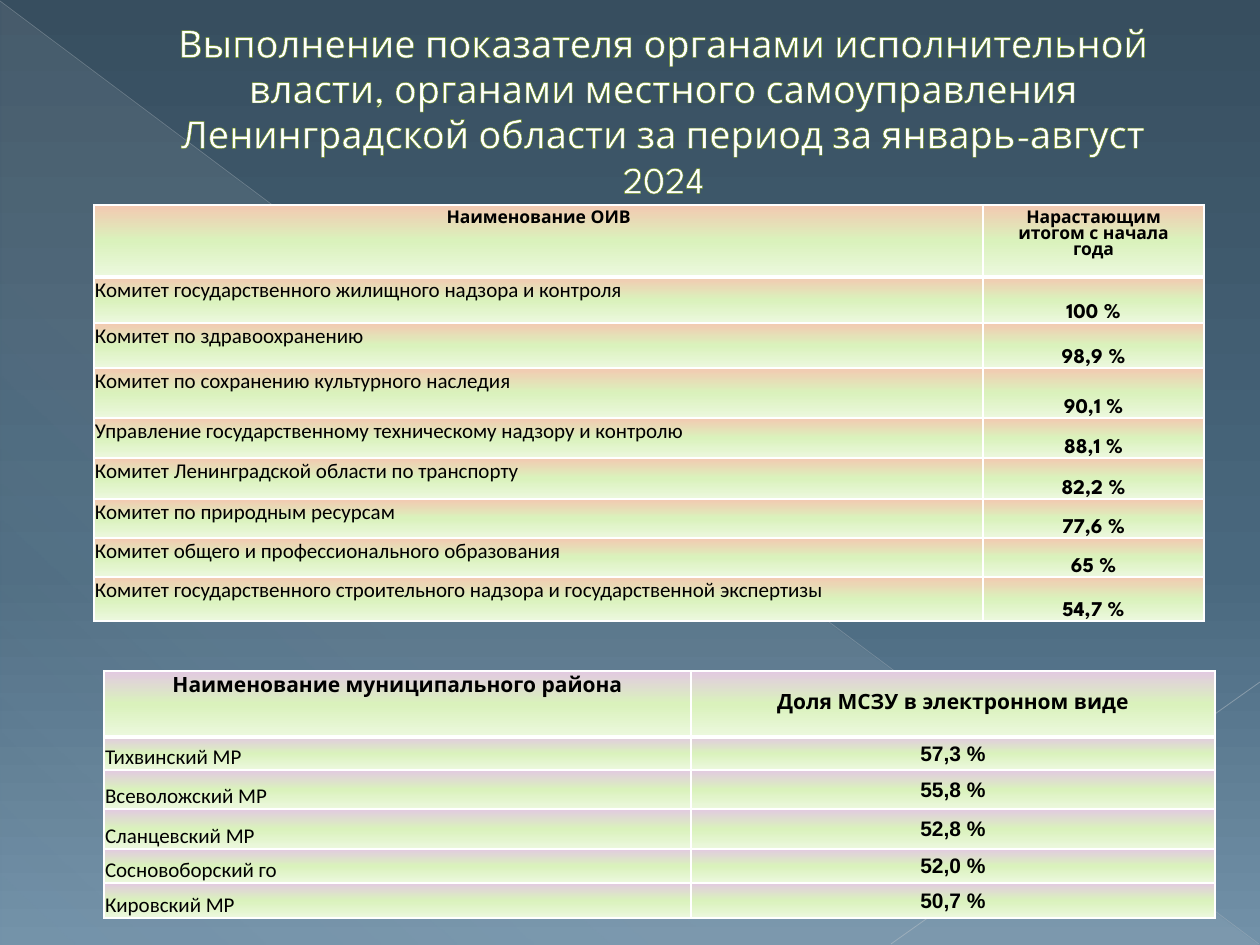
from dataclasses import dataclass

from lxml.etree import SubElement
from pptx import Presentation
from pptx.dml.color import RGBColor
from pptx.enum.shapes import MSO_CONNECTOR as Link, MSO_SHAPE as Shape
from pptx.enum.text import MSO_ANCHOR as Anchor, MSO_AUTO_SIZE as Fit, PP_ALIGN as Align
from pptx.oxml import parse_xml
from pptx.oxml.ns import nsdecls, qn
from pptx.util import Emu, Pt


@dataclass(frozen=True)
class Theme:
    head: str = "League Spartan"
    body: str = "Calibri"
    digit: str = "Arial"
    white: str = "FFFFFF"
    black: str = "000000"
    edge: str = "698A18"
    title: float = 21.6
    small: int = 10
    text: int = 12
    back: tuple = ((0, "374E5F"), (60, "49687E"), (100, "7291A8"))
    glow: tuple = ((0, "E7ECED", 10), (70, "E7ECED", 8), (100, "E7ECED", 1))
    peach: tuple = ((0, "F3C9B1"), (50, "DAF2BC"), (100, "ECF8DE"))
    lilac: tuple = ((0, "E2CAE1"), (50, "DAF2BC"), (100, "ECF8DE"))


@dataclass(frozen=True)
class Grid:
    """Place, look and content of one two-column table."""
    left: int
    top: int
    cols: tuple
    rows: tuple
    stops: tuple
    size: int
    font: str
    anchors: tuple
    last: Anchor
    data: tuple


T = Theme()

BODIES = Grid(
    94, 205, (889, 221), (72, 46, 45, 50, 40, 41, 39, 39, 44),
    T.peach, T.small, T.head, (Anchor.TOP, Anchor.BOTTOM), Anchor.TOP,
    (("Наименование ОИВ", "Нарастающим итогом с начала года"),
     ("Комитет государственного жилищного надзора и контроля", "100 %"),
     ("Комитет по здравоохранению", "98,9 %"),
     ("Комитет по сохранению культурного наследия", "90,1 %"),
     ("Управление государственному техническому надзору и контролю", "88,1 %"),
     ("Комитет Ленинградской области по транспорту", "82,2 %"),
     ("Комитет по природным ресурсам", "77,6 %"),
     ("Комитет общего и профессионального образования", "65 %"),
     ("Комитет государственного строительного надзора и государственной экспертизы",
      "54,7 %")))

TOWNS = Grid(
    104, 671, (587, 524), (66, 33, 39, 40, 34, 35),
    T.lilac, T.text, T.digit, (Anchor.BOTTOM, Anchor.MIDDLE), Anchor.MIDDLE,
    (("Наименование муниципального района", "Доля МСЗУ в электронном виде"),
     ("Тихвинский МР", "57,3 %"),
     ("Всеволожский МР", "55,8 %"),
     ("Сланцевский МР", "52,8 %"),
     ("Сосновоборский го", "52,0 %"),
     ("Кировский МР", "50,7 %")))


def px(n):
    return Emu(round(n * 914400 / 126))


def fade(fill, host, stops, angle=90):
    """Fill host with a linear gradient of (percent, colour, opacity) stops."""
    fill.solid()
    grad = parse_xml(f'<a:gradFill {nsdecls("a")} rotWithShape="1"><a:gsLst/>'
                     f'<a:lin ang="{angle * 60000}" scaled="0"/></a:gradFill>')
    for pos, color, *alpha in stops:
        stop = SubElement(grad[0], qn("a:gs"), pos=str(pos * 1000))
        tint = SubElement(stop, qn("a:srgbClr"), val=color)
        if alpha:
            SubElement(tint, qn("a:alpha"), val=str(alpha[0] * 1000))
    solid = host.find(qn("a:solidFill"))
    host.replace(solid, grad)


def stroke(tag, color, width):
    return parse_xml(
        f'<a:{tag} {nsdecls("a")} w="{Pt(width)}"><a:solidFill>'
        f'<a:srgbClr val="{color}"/></a:solidFill><a:prstDash val="solid"/></a:{tag}>')


def add_wedge(slide):
    wedge = slide.shapes.add_shape(Shape.RIGHT_TRIANGLE, px(1), px(2), px(1258), px(943))
    wedge.shadow.inherit = False
    wedge.line.fill.background()
    fade(wedge.fill, wedge._element.spPr, T.glow, 133)


def add_ray(slide, ends, color, width, alpha):
    ray = slide.shapes.add_connector(Link.STRAIGHT, *map(px, ends))
    ray.line.width = Pt(width)
    ray.line.color.rgb = RGBColor.from_string(color)
    props = ray._element.spPr
    tint = props.find(".//" + qn("a:srgbClr"))
    SubElement(tint, qn("a:alpha"), val=str(alpha * 1000))
    SubElement(props, qn("a:effectLst"))


def style(para, font, size, color, bold=False, align=Align.CENTER):
    para.alignment = align
    para.font.name = font
    para.font.size = Pt(size)
    para.font.bold = bold
    para.font.color.rgb = RGBColor.from_string(color)


def set_title(slide, text):
    title = slide.shapes.title
    slide.shapes._spTree.append(title._element)  # in front of the backdrop
    title.left, title.top, title.width, title.height = map(px, (63, 16, 1134, 189))
    frame = title.text_frame
    frame.text = text
    frame.word_wrap = True
    frame.auto_size = Fit.NONE
    frame.vertical_anchor = Anchor.MIDDLE
    para = frame.paragraphs[0]
    style(para, T.head, T.title, T.white)
    para._p.get_or_add_pPr().set("marL", str(px(67)))
    para.runs[0].font._element.insert(0, stroke("ln", T.edge, 0.5))


def frame_cell(cell, row):
    """Draw white borders, with a thick rule under the header row."""
    props = cell._tc.get_or_add_tcPr()
    widths = {"lnL": 1, "lnR": 1, "lnT": 3 if row == 1 else 1, "lnB": 1 if row else 3}
    for spot, (tag, width) in enumerate(widths.items()):
        props.insert(spot, stroke(tag, T.white, width))


def fill_cell(cell, grid, row, col):
    cell.text = grid.data[row][col]
    para = cell.text_frame.paragraphs[0]
    if row == 0:
        style(para, T.head, grid.size, T.black, True)
        cell.vertical_anchor = grid.last if col else Anchor.TOP
    else:
        if col:
            style(para, grid.font, T.text, T.black, True)
        else:
            style(para, T.body, T.text, T.black, align=Align.LEFT)
        cell.vertical_anchor = grid.anchors[col]
        cell.margin_left = cell.margin_right = cell.margin_top = px(1)
        cell.margin_bottom = 0
    fade(cell.fill, cell._tc.get_or_add_tcPr(), grid.stops)
    frame_cell(cell, row)


def add_grid(slide, grid):
    area = (grid.left, grid.top, sum(grid.cols), sum(grid.rows))
    table = slide.shapes.add_table(len(grid.rows), len(grid.cols), *map(px, area)).table
    table.horz_banding = False
    for col, width in zip(table.columns, grid.cols):
        col.width = px(width)
    for r, height in enumerate(grid.rows):
        table.rows[r].height = px(height)
        for c in range(len(grid.cols)):
            fill_cell(table.cell(r, c), grid, r, c)


def main():
    deck = Presentation()
    deck.slide_width, deck.slide_height = px(1260), px(945)
    slide = deck.slides.add_slide(deck.slide_layouts[5])
    fill = slide.background.fill
    fade(fill, slide._element.cSld.bg.bgPr, T.back)
    add_wedge(slide)
    add_ray(slide, (0, 1, 1259, 944), "BAC0C6", 0.39, 35)
    add_ray(slide, (1260, 682, 891, 944), "C2C7CC", 0.47, 45)
    set_title(slide, "Выполнение показателя органами исполнительной власти, органами "
                     "местного самоуправления Ленинградской области за период "
                     "за январь-август 2024")
    add_grid(slide, BODIES)
    add_grid(slide, TOWNS)
    deck.save("out.pptx")


if __name__ == "__main__":
    main()
